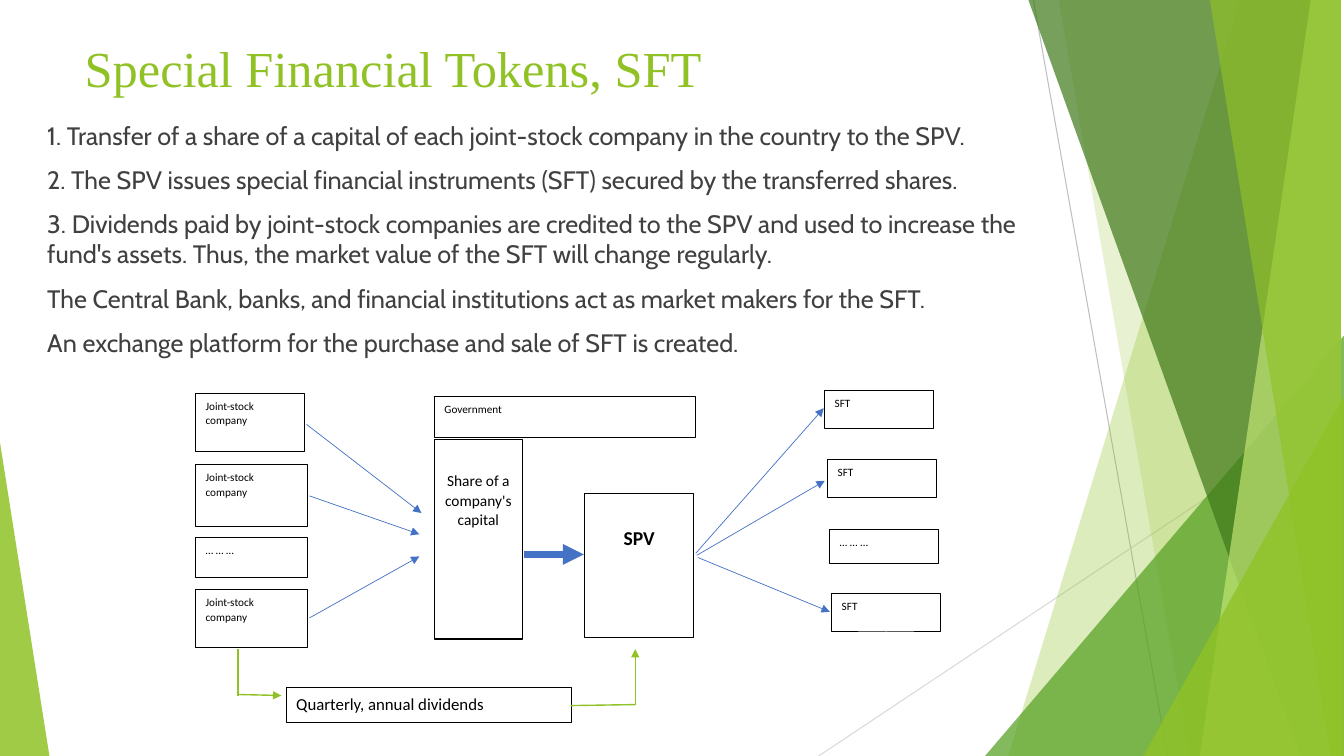
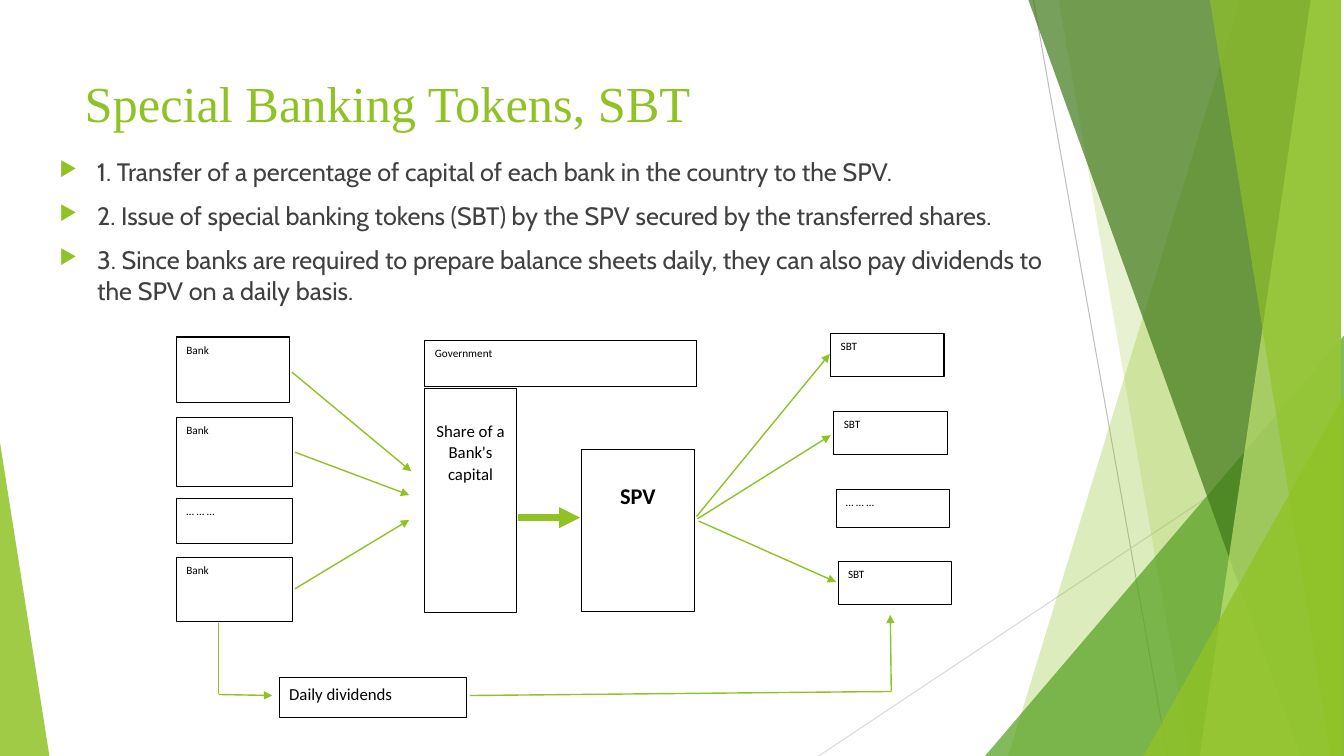
from dataclasses import dataclass

from lxml import etree
from pptx import Presentation
from pptx import util as u
from pptx.dml.color import RGBColor
from pptx.enum import shapes, text
from pptx.oxml import ns


@dataclass(frozen=True)
class Theme:
    green: str = "90C226"
    leaf: str = "54A021"
    forest: str = "3F7819"
    lime: str = "C0E474"
    blue: str = "4472C4"
    silver: str = "BFBFBF"
    mist: str = "D9D9D9"
    ink: str = "404040"
    black: str = "000000"
    white: str = "FFFFFF"
    title_font: str = "Times New Roman"
    body_font: str = "Cabin"
    box_font: str = "Calibri"
    title_size: int = 36
    body_size: int = 18
    label_size: int = 8
    dividend_size: int = 12
    outline: float = 0.75
    heavy: float = 5


theme = Theme()
deck = Presentation()
deck.slide_width, deck.slide_height = u.Inches(13.33), u.Inches(7.5)
ROWS, COLUMNS = 75, 133.3
cell = deck.slide_height / ROWS
layout = deck.slide_layouts[5]


def write(para, words, font, size, colour, bold=False):
    span = para.add_run()
    span.text = words
    span.font.name, span.font.size, span.font.bold = font, u.Pt(size), bold
    span.font.color.rgb = RGBColor.from_string(colour)


def draw_line(page, ends, colour, width, arrow=False):
    line = page.shapes.add_connector(
        shapes.MSO_CONNECTOR.STRAIGHT, *[round(end * cell) for end in ends])
    line.line.color.rgb = RGBColor.from_string(colour)
    line.line.width = u.Pt(width)
    properties = line.element.spPr
    if arrow:
        etree.SubElement(properties.find(ns.qn("a:ln")), ns.qn("a:tailEnd"), type="triangle")
    etree.SubElement(properties, ns.qn("a:effectLst"))
    return line


facets = [
    (122.8, COLUMNS, 100.4, theme.green, 30),
    (105, COLUMNS, 118.3, theme.green, 20),
    (97.7, 33.3, 35.6, 1, theme.leaf, 72),
    (102.1, COLUMNS, 129.1, theme.forest, 70),
    (130.3, COLUMNS, 119.2, theme.lime, 70),
    (119.6, COLUMNS, 131.8, theme.green, 65),
    (113.4, 39.3, 19.9, 1, theme.green, 80),
    (0, 43.9, 4.9, 0, theme.green, 85),
]

content = [
    dict(
        title="Special Financial Tokens, SFT", title_at=(7.4, 3.2, 94, 8.2),
        body_at=(3.7, 11.4, 102.9, 26.3), bullets=False,
        body=[
            "1. Transfer of a share of a capital of each joint-stock company in the country to the SPV.",
            "2. The SPV issues special financial instruments (SFT) secured by the transferred shares.",
            "3. Dividends paid by joint-stock companies are credited to the SPV and used to increase "
            "the fund's assets. Thus, the market value of the SFT will change regularly.",
            "The Central Bank, banks, and financial institutions act as market makers for the SFT.",
            "An exchange platform for the purchase and sale of SFT is created."],
        origin=(19.4, 38.7), stretch=(1, 1), flow=theme.blue, flow_width=0.5,
        payer="Joint-stock company", share="Share of a company's capital", token="SFT",
        share_size=11, spv_size=14,
        dividend="Quarterly, annual dividends", dividend_at=(28.4, 68.2, 28.3, 3.5),
        dividend_path=[
            (23.6, 64.4, 23.6, 69, False), (23.6, 68.9, 27.9, 69, True),
            (56.6, 70, 63, 69.9, False), (63, 69.9, 63, 64.4, True)]),
    dict(
        title="Special Banking Tokens, SBT", title_at=(7.4, 6.7, 94, 14.4),
        body_at=(4.9, 15, 102.6, 16.6), bullets=True,
        body=[
            "1. Transfer of a percentage of capital of each bank in the country to the SPV.",
            "2. Issue of special banking tokens (SBT) by the SPV secured by the transferred shares.",
            "3. Since banks are required to prepare balance sheets daily, they can also pay dividends "
            "to the SPV on a daily basis."],
        origin=(17.5, 33.1), stretch=(1.04, 1.12), flow=theme.green, flow_width=1,
        payer="Bank", share="Share of a Bank's capital", token="SBT",
        share_size=12, spv_size=16,
        dividend="Daily dividends", dividend_at=(27.7, 67.2, 18.6, 4),
        dividend_path=[
            (21.7, 61.8, 21.7, 68.9, False), (21.7, 68.9, 27, 69, True),
            (46.6, 69, 88.4, 68.6, False), (88.4, 68.6, 88.3, 61, True)]),
]

flows = [
    (11, 3.4, 22.4, 12.2), (11.3, 10.5, 22.2, 14.3), (11.3, 22.6, 22.2, 16.5),
    (49.6, 16.2, 62.3, 1.8), (49.7, 16.4, 62.4, 9), (49.8, 16.6, 62.9, 22),
]
transfer = (32.6, 16.3, 38.5, 16.3)

pages = [deck.slides.add_slide(layout) for _ in content]

backdrop = [
    draw_line(pages[0], (102.5, 0, 115.8, ROWS), theme.silver, theme.outline),
    draw_line(pages[0], (COLUMNS, 40.3, 81.2, ROWS), theme.mist, theme.outline),
]
for *outline, colour, opacity in facets:
    if len(outline) == 3:
        top_left, right, bottom_left = outline
        builder = pages[0].shapes.build_freeform(top_left, 0, scale=cell)
        builder.add_line_segments([(right, 0), (right, ROWS), (bottom_left, ROWS)], close=True)
        facet = builder.convert_to_shape()
    else:
        left, top, width, apex = outline
        facet = pages[0].shapes.add_shape(
            shapes.MSO_SHAPE.ISOSCELES_TRIANGLE,
            *[round(n * cell) for n in (left, top, width, ROWS - top)])
        facet.adjustments[0] = apex
    facet.shadow.inherit = False
    facet.line.fill.background()
    facet.fill.solid()
    facet.fill.fore_color.rgb = RGBColor.from_string(colour)
    paint = facet.element.spPr.find(".//" + ns.qn("a:srgbClr"))
    etree.SubElement(paint, ns.qn("a:alpha"), val=str(opacity * 1000))
    backdrop.append(facet)
for part in backdrop:
    layout.shapes.element.append(part.element)

for page, topic in zip(pages, content):
    title = page.shapes.title
    title.left, title.top, title.width, title.height = [round(n * cell) for n in topic["title_at"]]
    frame = title.text_frame
    frame.auto_size = text.MSO_AUTO_SIZE.NONE
    frame.vertical_anchor = text.MSO_ANCHOR.TOP
    frame.paragraphs[0].alignment = text.PP_ALIGN.LEFT
    write(frame.paragraphs[0], topic["title"], theme.title_font, theme.title_size, theme.green)

    frame = page.shapes.add_textbox(*[round(n * cell) for n in topic["body_at"]]).text_frame
    frame.word_wrap = True
    for index, words in enumerate(topic["body"]):
        para = frame.add_paragraph() if index else frame.paragraphs[0]
        para.space_before = u.Pt(10 if index else 0)
        write(para, words, theme.body_font, theme.body_size, theme.ink)
        if topic["bullets"]:
            style = para._p.get_or_add_pPr()
            hang = round(3.75 * cell)
            style.set("marL", str(hang))
            style.set("indent", str(-hang))
            tint = etree.SubElement(style, ns.qn("a:buClr"))
            etree.SubElement(tint, ns.qn("a:srgbClr"), val=theme.green)
            etree.SubElement(style, ns.qn("a:buSzPct"), val="80000")
            etree.SubElement(style, ns.qn("a:buChar"), char="▶")

    payer, token, dots, small = topic["payer"], topic["token"], "… … …", theme.label_size
    diagram = [
        (0, 0.3, 10.8, 5.8, payer, small, False),
        (0, 7.4, 11.1, 6.1, payer, small, False),
        (0, 14.6, 11.1, 4, dots, small, False),
        (0, 19.8, 11.1, 5.7, payer, small, False),
        (23.7, 0.6, 25.9, 4.1, "Government", small, False),
        (23.7, 4.9, 8.7, 19.8, topic["share"], topic["share_size"], True),
        (38.6, 10.3, 10.8, 14.3, "SPV", topic["spv_size"], True),
        (62.4, 0, 10.8, 3.8, token, small, False),
        (62.7, 6.9, 10.8, 3.8, token, small, False),
        (62.9, 13.8, 10.8, 3.4, dots, small, False),
        (63.1, 20.2, 10.8, 3.8, token, small, False),
    ]
    (left, top), (wide, tall) = topic["origin"], topic["stretch"]
    boxes = [(left + x * wide, top + y * tall, w * wide, h * tall, *label)
             for x, y, w, h, *label in diagram]
    boxes.append((*topic["dividend_at"], topic["dividend"], theme.dividend_size, False))
    for *place, words, size, central in boxes:
        box = page.shapes.add_shape(shapes.MSO_SHAPE.RECTANGLE, *[round(n * cell) for n in place])
        box.shadow.inherit = False
        box.fill.solid()
        box.fill.fore_color.rgb = RGBColor.from_string(theme.white)
        box.line.color.rgb = RGBColor.from_string(theme.black)
        box.line.width = u.Pt(theme.outline)
        frame = box.text_frame
        frame.word_wrap = True
        frame.vertical_anchor = text.MSO_ANCHOR.TOP
        frame.margin_top = round((3 if central else 0.5) * cell)
        para = frame.paragraphs[0]
        para.alignment = text.PP_ALIGN.CENTER if central else text.PP_ALIGN.LEFT
        para.line_spacing = 1.07
        write(para, words, theme.box_font, size, theme.black, bold=words == "SPV")

    for ends in [*flows, transfer]:
        x1, y1, x2, y2 = ends
        placed = left + x1 * wide, top + y1 * tall, left + x2 * wide, top + y2 * tall
        width = theme.heavy if ends == transfer else topic["flow_width"]
        draw_line(page, placed, topic["flow"], width, arrow=True)
    for *ends, arrow in topic["dividend_path"]:
        draw_line(page, ends, theme.green, 1, arrow)

deck.save("out.pptx")
